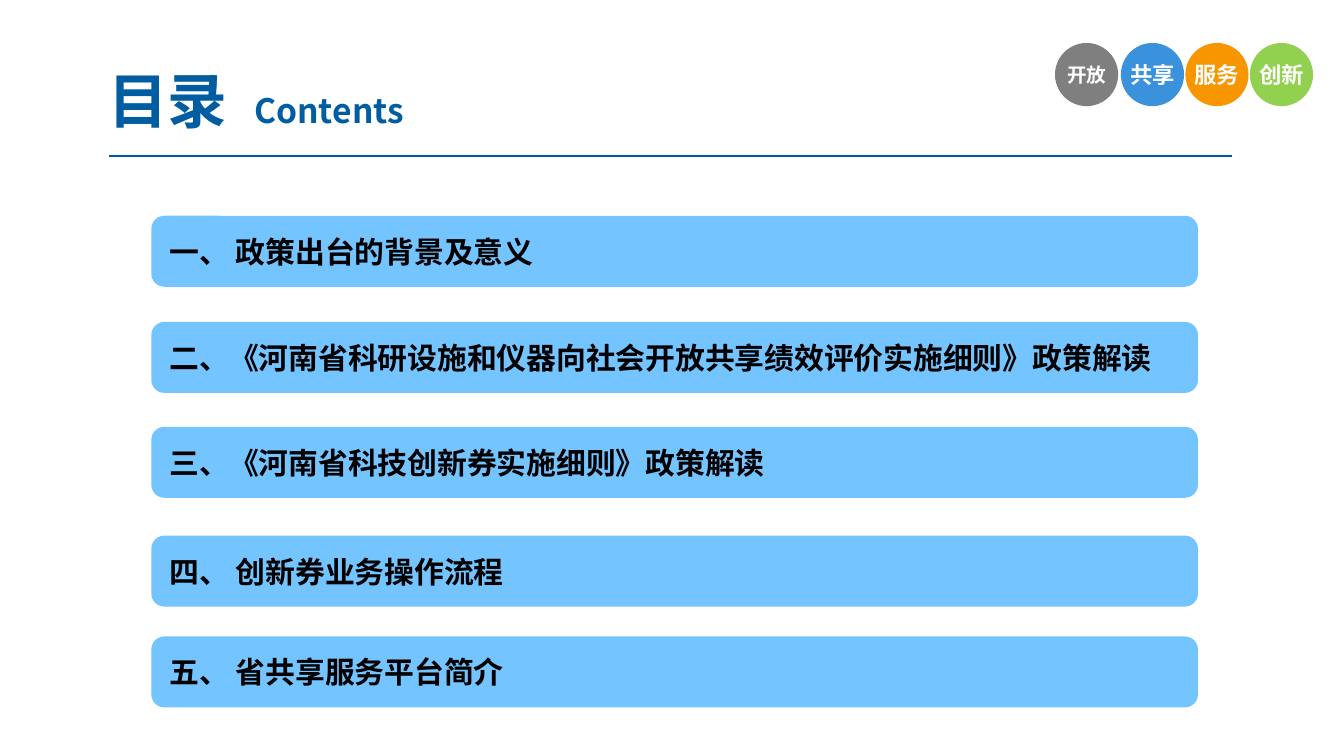
from lxml.etree import SubElement
from pptx import Presentation
from pptx.dml.color import RGBColor
from pptx.enum.shapes import MSO_CONNECTOR, MSO_SHAPE
from pptx.enum.text import MSO_ANCHOR, MSO_AUTO_SIZE, PP_ALIGN
from pptx.oxml.ns import qn
from pptx.util import Inches, Pt

BLUE = RGBColor(0x00, 0x5D, 0xA2)
RULE = RGBColor(0x00, 0x5B, 0x9E)
BAR = RGBColor(0x74, 0xC4, 0xFF)
BLACK = RGBColor(0x00, 0x00, 0x00)
WHITE = RGBColor(0xFF, 0xFF, 0xFF)
GRAY = RGBColor(0x7F, 0x7F, 0x7F)
SKY = RGBColor(0x39, 0x92, 0xDB)
ORANGE = RGBColor(0xF7, 0x96, 0x00)
GREEN = RGBColor(0x92, 0xD0, 0x50)
CJK = "Noto Sans CJK SC"

# Offset from the left of the row, word, size, fill
BADGES = [
    (0, "开放", 10.5, GRAY),
    (0.49, "共享", 12, SKY),
    (0.97, "服务", 12, ORANGE),
    (1.45, "创新", 12, GREEN),
]
# Offset from the top of the list, text
ITEMS = [
    (0, "一、 政策出台的背景及意义"),
    (0.79, "二、《河南省科研设施和仪器向社会开放共享绩效评价实施细则》政策解读"),
    (1.57, "三、《河南省科技创新券实施细则》政策解读"),
    (2.38, "四、 创新券业务操作流程"),
    (3.13, "五、 省共享服务平台简介"),
]


def format_run(r, size, color, font):
    r.font.size = Pt(size)
    r.font.bold = True
    r.font.color.rgb = color
    r.font.name = font
    if font == CJK:
        SubElement(r.font._element, qn("a:ea"), typeface=font)


def add_filled_shape(s, kind, box, text, fill):
    sp = s.shapes.add_shape(kind, *map(Inches, box))
    sp.shadow.inherit = False
    sp.fill.solid()
    sp.fill.fore_color.rgb = fill
    sp.text_frame.text = text
    sp.text_frame.vertical_anchor = MSO_ANCHOR.MIDDLE
    return sp


def add_heading(s, left, top, width, height):
    title = s.shapes.title
    title.left, title.top = Inches(left), Inches(top)
    title.width, title.height = Inches(width), Inches(height)
    tf = title.text_frame
    tf.word_wrap = True
    tf.auto_size = MSO_AUTO_SIZE.NONE
    tf.vertical_anchor = MSO_ANCHOR.MIDDLE
    tf.margin_left = tf.margin_right = 0
    p = tf.paragraphs[0]
    p.alignment = PP_ALIGN.CENTER
    p.space_before = Pt(0)
    for text, size in [("目录", 32), (" ", 32), ("Contents", 18)]:
        r = p.add_run()
        r.text = text
        format_run(r, size, BLUE, CJK)
    # Widen the gap between the two languages
    p.runs[1].font._element.set("spc", "700")


def add_rule(s, left, top, width):
    y = Inches(top)
    line = s.shapes.add_connector(
        MSO_CONNECTOR.STRAIGHT, Inches(left), y, Inches(left + width), y)
    line.line.color.rgb = RULE
    line.line.width = Pt(0.75)
    SubElement(line._element.spPr, qn("a:effectLst"))


def add_badges(s, left, top, size):
    for dx, word, font_size, fill in BADGES:
        sp = add_filled_shape(
            s, MSO_SHAPE.OVAL, (left + dx, top, size, size), word, fill)
        sp.line.fill.background()
        tf = sp.text_frame
        tf.word_wrap = False
        p = tf.paragraphs[0]
        p.alignment = PP_ALIGN.CENTER
        format_run(p.runs[0], font_size, WHITE, "Calibri")


def add_contents(s, left, top, width, bar_height):
    for dy, text in ITEMS:
        sp = add_filled_shape(
            s, MSO_SHAPE.ROUNDED_RECTANGLE,
            (left, top + dy, width, bar_height), text, BAR)
        sp.line.color.rgb = BAR
        sp.line.width = Pt(2)
        p = sp.text_frame.paragraphs[0]
        p.alignment = PP_ALIGN.LEFT
        format_run(p.runs[0], 16, BLACK, CJK)


def main():
    prs = Presentation()
    prs.slide_width = Inches(10)
    prs.slide_height = prs.slide_width * 9 // 16
    s = prs.slides.add_slide(prs.slide_layouts[5])
    add_heading(s, 0.67, 0.47, 2.47, 0.54)
    add_rule(s, 0.81, 1.16, 8.36)
    add_badges(s, 7.85, 0.32, 0.47)
    add_contents(s, 1.14, 1.62, 7.76, 0.5)
    prs.save("out.pptx")


if __name__ == "__main__":
    main()
